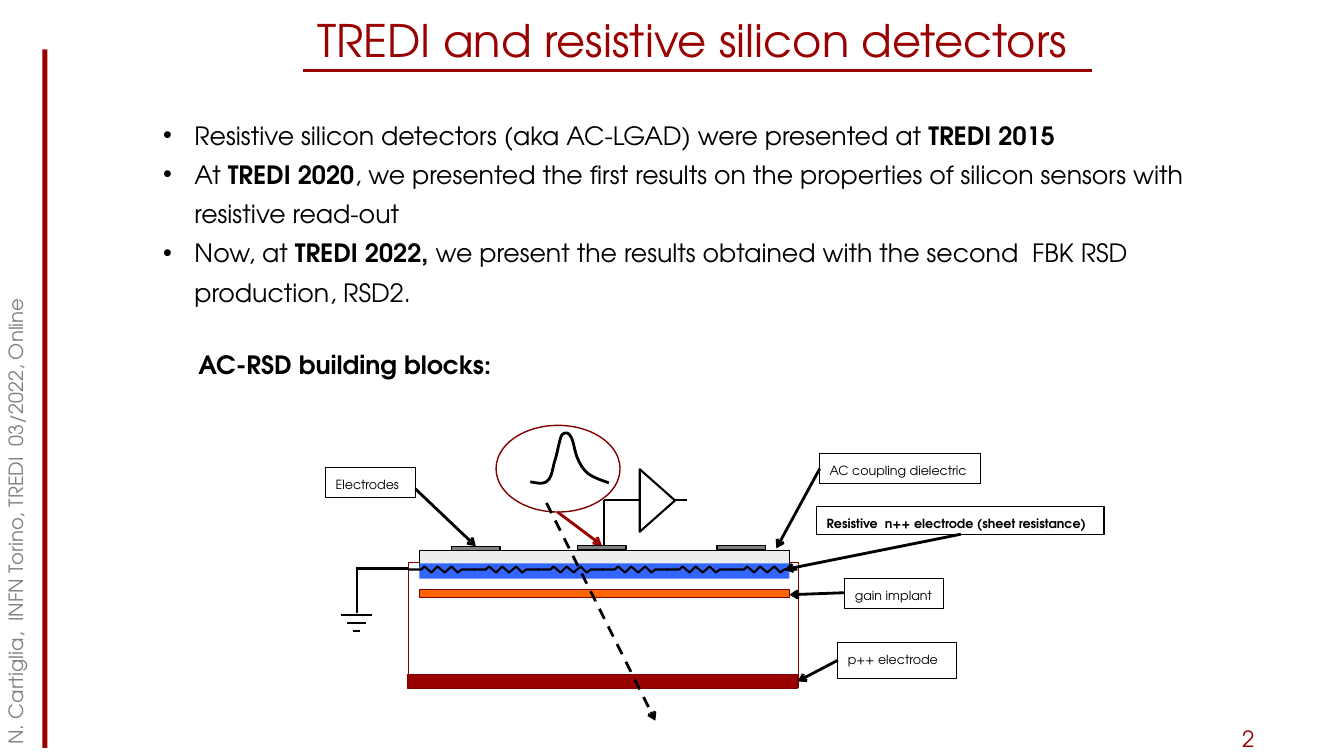
from lxml.etree import SubElement
from pptx import Presentation
from pptx.dml.color import RGBColor
from pptx.enum.dml import MSO_LINE
from pptx.enum.shapes import MSO_CONNECTOR, MSO_SHAPE as Kind
from pptx.enum.text import MSO_ANCHOR as Anchor, PP_ALIGN as Align
from pptx.oxml.ns import qn
from pptx.util import Inches, Pt

FONT = "TeX Gyre Adventor"
COLORS = {
    "red": "990000", "maroon": "800000", "black": "000000", "white": "FFFFFF",
    "gray": "808080", "orange": "FF6600", "pale": "EDEDED", "blue": "3366FF",
}
BULLETS = [
    [("Resistive silicon detectors (aka AC-LGAD) were presented at ", False),
     ("TREDI 2015", True)],
    [("At ", False), ("TREDI 2020", True),
     (", we presented the first results on the properties of silicon sensors "
      "with resistive read-out", False)],
    [("Now, at ", False), ("TREDI 2022, ", True),
     ("we present the results obtained with the second  FBK RSD production, RSD2.", False)],
]
LABELS = [
    ("Electrodes", (0.03, 0.44, 0.89, 0.3), False, (0.92, 0.65), (1.52, 1.22)),
    ("AC coupling dielectric", (4.93, 0.3, 1.6, 0.3), False, (4.93, 0.45), (4.5, 1.24)),
    ("Resistive  n++ electrode (sheet resistance)", (4.9, 0.82, 2.85, 0.28), True,
     (6.33, 1.1), (4.58, 1.45)),
    ("gain implant", (5.18, 1.54, 0.98, 0.3), False, (5.18, 1.68), (4.63, 1.7)),
    ("p++ electrode", (5.11, 2.17, 1.18, 0.36), False, (5.11, 2.35), (4.71, 2.56)),
]
PULSE = [
    [(0, 0.49), (0.06, 0.5), (0.13, 0.52), (0.17, 0.48)],
    [(0.17, 0.48), (0.22, 0.44), (0.22, 0.34), (0.25, 0.26)],
    [(0.25, 0.26), (0.27, 0.19), (0.29, 0.07), (0.31, 0.03)],
    [(0.31, 0.03), (0.34, -0.01), (0.38, 0), (0.4, 0.04)],
    [(0.4, 0.04), (0.43, 0.08), (0.44, 0.2), (0.47, 0.26)],
    [(0.47, 0.26), (0.5, 0.33), (0.54, 0.39), (0.59, 0.42)],
    [(0.59, 0.42), (0.65, 0.46), (0.78, 0.5), (0.78, 0.5)],
]
ZIGZAG = [(0, 0), (0.13, 0), (0.16, -0.03), (0.23, 0.03), (0.29, -0.03),
          (0.36, 0.03), (0.43, -0.03), (0.49, 0.03), (0.53, 0), (0.66, 0)]


def rgb(name):
    return RGBColor.from_string(COLORS[name])


def style_font(para, size, color, bold=None):
    font = para.font
    font.name, font.size, font.bold = FONT, Pt(size), bold
    font.color.rgb = rgb(color)


def paint(shape, fill=None, line=None, width=1):
    shape.shadow.inherit = False
    if fill:
        shape.fill.solid()
        shape.fill.fore_color.rgb = rgb(fill)
    else:
        shape.fill.background()
    if line:
        shape.line.color.rgb = rgb(line)
        shape.line.width = Pt(width)
    else:
        shape.line.fill.background()


def add_part(page, kind, left, top, width, height, fill=None, line=None, weight=1):
    part = page.shapes.add_shape(
        kind, Inches(left), Inches(top), Inches(width), Inches(height))
    paint(part, fill, line, weight)
    return part


def add_line(page, start, end, color="black", width=1.5, arrow=False, dashed=False):
    line = page.shapes.add_connector(
        MSO_CONNECTOR.STRAIGHT, *[Inches(value) for value in (*start, *end)])
    line.line.color.rgb = rgb(color)
    line.line.width = Pt(width)
    if dashed:
        line.line.dash_style = MSO_LINE.DASH
    properties = line._element.spPr
    if arrow:
        SubElement(properties.find(qn("a:ln")), qn("a:tailEnd"), type="arrow")
    SubElement(properties, qn("a:effectLst"))


def add_curve(page, left, top, points, width):
    placed = [(Inches(left + x), Inches(top + y)) for x, y in points]
    builder = page.shapes.build_freeform(*placed[0])
    builder.add_line_segments(placed[1:], close=False)
    paint(builder.convert_to_shape(), line="black", width=width)


def sample(curve, steps=8):
    for step in range(1, steps + 1):
        t = step / steps
        weights = ((1 - t) ** 3, 3 * t * (1 - t) ** 2, 3 * t * t * (1 - t), t ** 3)
        yield tuple(sum(w * point[axis] for w, point in zip(weights, curve))
                    for axis in (0, 1))


def add_text(page, left, top, width, height, text, size, color, bold=None):
    box = page.shapes.add_textbox(
        Inches(left), Inches(top), Inches(width), Inches(height))
    box.text_frame.word_wrap = True
    para = box.text_frame.paragraphs[0]
    para.text = text
    style_font(para, size, color, bold)
    return box


def add_frame(page, width, height):
    add_part(page, Kind.RECTANGLE, 0.42, 0.49, 0.05, height - 0.57, "red")
    add_line(page, (3.01, 0.7), (10.83, 0.7), "red", 2)
    number = add_text(page, width - 1.11, height - 0.35, 0.81, 0.35, "2", 16, "red")
    number.text_frame.vertical_anchor = Anchor.MIDDLE
    footer = add_text(page, -3.49, 3.63, 7.33, 0.38,
                      "N. Cartiglia,  INFN Torino, TREDI  03/2022, Online", 14, "gray")
    footer.rotation = 270
    title = add_text(page, 0.41, -0.02, width - 0.41, 0.73,
                     "TREDI and resistive silicon detectors", 32, "red")
    title.text_frame.vertical_anchor = Anchor.BOTTOM
    title.text_frame.paragraphs[0].alignment = Align.CENTER


def add_bullets(page, left, top, width, height):
    box = page.shapes.add_textbox(
        Inches(left), Inches(top), Inches(width), Inches(height))
    frame = box.text_frame
    frame.word_wrap = True
    for index, parts in enumerate(BULLETS):
        para = frame.add_paragraph() if index else frame.paragraphs[0]
        para.line_spacing = 1.3
        properties = para._p.get_or_add_pPr()
        properties.set("marL", str(Inches(0.31)))
        properties.set("indent", str(Inches(-0.31)))
        SubElement(properties, qn("a:buFont"), typeface="Arial")
        SubElement(properties, qn("a:buChar"), char="•")
        style_font(para, 18, "black")
        for text, bold in parts:
            span = para.add_run()
            span.text = text
            span.font.bold = bold


def add_label(page, left, top, width, height, text, bold):
    label = add_part(page, Kind.RECTANGLE, left, top, width, height, None, "black", 0.75)
    frame = label.text_frame
    frame.word_wrap = width > 2
    frame.vertical_anchor = Anchor.TOP
    para = frame.paragraphs[0]
    para.text = text
    para.alignment = Align.LEFT
    para.line_spacing = 1.3
    style_font(para, 9, "black", bold)


def add_sensor(page, left, top):
    def at(x, y):
        return left + x, top + y

    for x, y, width, height, fill, line in [
        (0.85, 1.38, 3.87, 1.24, None, "maroon"),
        (0.96, 1.65, 3.67, 0.08, "orange", "maroon"),
        (0.96, 1.26, 3.67, 0.17, "pale", "black"),
        (1.28, 1.22, 0.48, 0.04, "gray", "black"),
        (2.53, 1.21, 0.48, 0.04, "gray", "black"),
        (3.91, 1.21, 0.48, 0.04, "gray", "black"),
        (0.96, 1.39, 3.67, 0.15, "blue", None),
        (0.84, 2.49, 3.87, 0.14, "red", "maroon"),
    ]:
        add_part(page, Kind.RECTANGLE, *at(x, y), width, height, fill, line)
    for index in range(6):
        add_curve(page, *at(0.85 + 0.64 * index, 1.45), ZIGZAG, 1.5)
    for start, end in [
        ((2.79, 0.76), (3.61, 0.76)), ((2.79, 0.76), (2.79, 1.21)),
        ((0.33, 1.44), (0.85, 1.44)), ((0.34, 1.44), (0.34, 1.88)),
        ((0.18, 1.9), (0.49, 1.9)), ((0.24, 1.98), (0.43, 1.98)),
        ((0.3, 2.06), (0.37, 2.06)),
    ]:
        add_line(page, at(*start), at(*end))
    amplifier = add_part(page, Kind.ISOSCELES_TRIANGLE, *at(3.01, 0.59), 0.62, 0.35,
                         "white", "black", 1.5)
    amplifier.rotation = 90
    pulse = PULSE[0][:1] + [point for curve in PULSE for point in sample(curve)]
    add_curve(page, *at(2.06, 0.09), pulse, 2)
    add_part(page, Kind.OVAL, *at(1.72, 0.02), 1.23, 0.86, None, "maroon")
    add_line(page, at(2.33, 0.88), at(2.77, 1.21), "red", 2, arrow=True)
    add_line(page, at(2.22, 0.79), at(3.3, 2.95), width=2, arrow=True, dashed=True)
    for text, (x, y, width, height), bold, start, end in LABELS:
        add_label(page, *at(x, y), width, height, text, bold)
        add_line(page, at(*start), at(*end), width=2, arrow=True)


def main():
    deck = Presentation()
    deck.slide_width, deck.slide_height = Inches(13.33), Inches(7.5)
    page = deck.slides.add_slide(deck.slide_layouts[6])
    add_frame(page, 13.33, 7.5)
    add_bullets(page, 1.52, 1.05, 10.75, 2.03)
    add_text(page, 1.87, 3.42, 3.15, 0.4, "AC-RSD building blocks:", 18, "black", True)
    add_sensor(page, 3.2, 4.2)
    deck.save("out.pptx")


if __name__ == "__main__":
    main()
